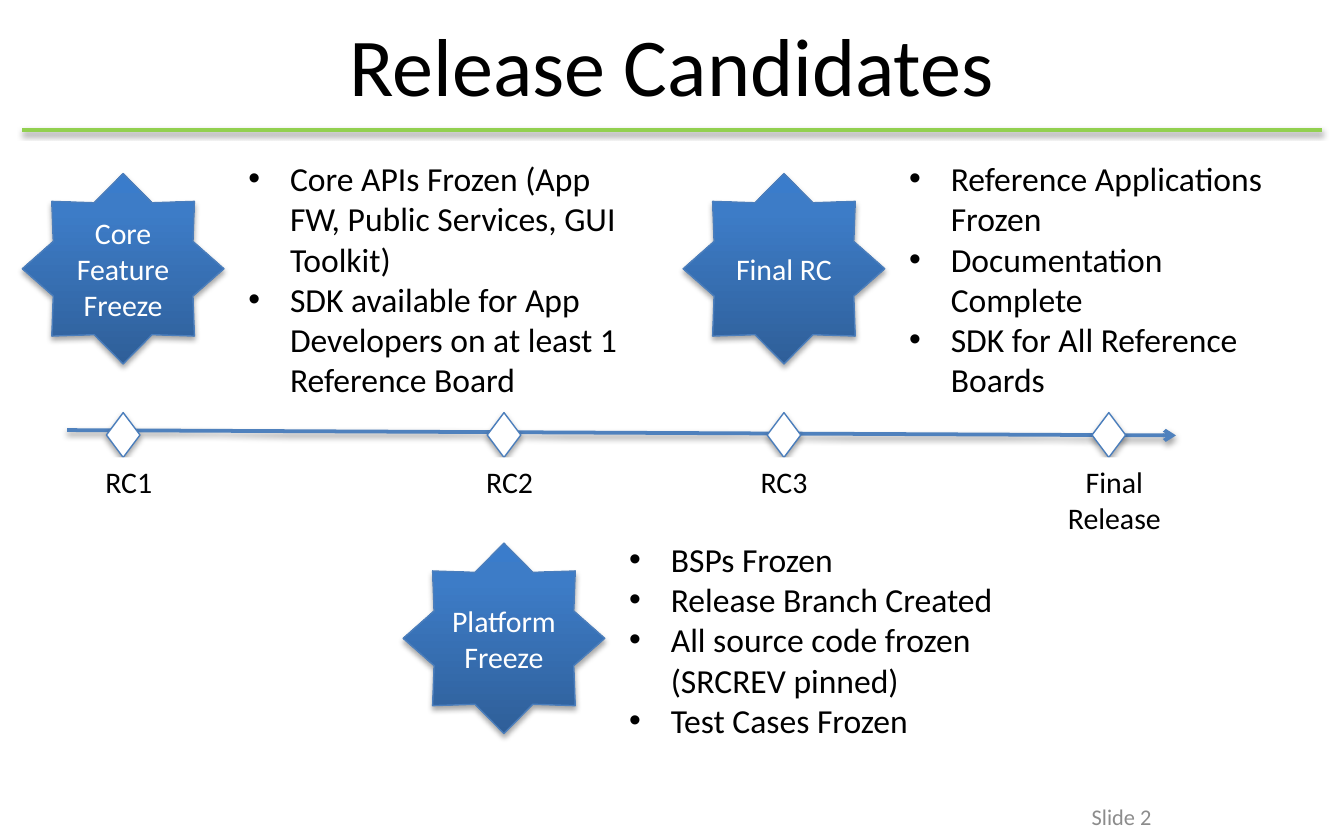
from lxml.etree import SubElement as Sub
from pptx import Presentation
from pptx.dml.color import RGBColor as Rgb
from pptx.enum.shapes import MSO_CONNECTOR as Conn, MSO_SHAPE as Kind
from pptx.enum.text import MSO_ANCHOR as Anchor, PP_ALIGN as Align
from pptx.oxml.ns import qn
from pptx.util import Inches, Pt


class Theme:
    font = "Calibri"
    black, white, gray = "000000", "FFFFFF", "8C8C8C"
    green, blue, edge = "92D050", "4F81BD", "4B7EBC"
    fade = [(0, "2F5F99"), (80, "3D7CC7"), (100, "3A7CCB")]
    head, body, label, foot = 44, 18, 16, 12


# The slide is a grid of 120 columns by 75 rows
COLS, ROWS, CELL = 120, 75, Inches(1 / 12)


def grid(*cells):
    return [round(c * CELL) for c in cells]


def node(parent, tag, **attrs):
    return Sub(parent, qn(tag), {k: str(v) for k, v in attrs.items()})


def shade(props, alpha, dist):
    """Give a shape or line a soft shadow below it."""
    old = props.find(qn("a:effectLst"))
    if old is not None:
        props.remove(old)
    cast = node(node(props, "a:effectLst"), "a:outerShdw", blurRad=Pt(3.1),
                dist=Pt(dist), dir=90 * 60000, rotWithShape=0)
    tint = node(cast, "a:srgbClr", val=Theme.black)
    node(tint, "a:alpha", val=alpha * 1000)


def blend(props):
    """Fill a shape from dark at its foot to light at its top."""
    fill = node(props, "a:gradFill", rotWithShape=1)
    stops = node(fill, "a:gsLst")
    for pos, tone in Theme.fade:
        node(node(stops, "a:gs", pos=pos * 1000), "a:srgbClr", val=tone)
    node(fill, "a:lin", ang=270 * 60000, scaled=0)
    props.find(qn("a:prstGeom")).addnext(fill)


def write(shape, lines, size=Theme.label, color=Theme.black,
          align=Align.CENTER, anchor=Anchor.TOP, bullet=False):
    """Put one paragraph for each line into a shape."""
    frame = shape.text_frame
    frame.word_wrap = True
    frame.vertical_anchor = anchor
    for i, line in enumerate(lines):
        para = frame.add_paragraph() if i else frame.paragraphs[0]
        para.text = line
        para.alignment = align
        if bullet:
            props = para._p.get_or_add_pPr()
            props.set("marL", str(Inches(0.31)))
            props.set("indent", str(Inches(-0.31)))
            node(props, "a:buFont", typeface="Arial")
            node(props, "a:buChar", char="•")
        font = para.font
        font.name, font.size = Theme.font, Pt(size)
        font.color.rgb = Rgb.from_string(color)


def text(slide, box, lines, **form):
    write(slide.shapes.add_textbox(*grid(*box)), lines, **form)


def rule(slide, ends, color):
    line = slide.shapes.add_connector(Conn.STRAIGHT, *grid(*ends))
    line.line.color.rgb = Rgb.from_string(color)
    line.line.width = Pt(2)
    shade(line._element.spPr, 38, 1.6)
    return line


def solid(slide, kind, box):
    shape = slide.shapes.add_shape(kind, *grid(*box))
    shape.fill.solid()
    shape.fill.fore_color.rgb = Rgb.from_string(Theme.white)
    shape.line.fill.background()
    shape.shadow.inherit = False
    return shape


def edge(shape):
    shape.line.color.rgb = Rgb.from_string(Theme.edge)
    shape.line.width = Pt(0.75)
    shade(shape._element.spPr, 35, 1.8)


def header(slide, box, title):
    x, y, w, h = box
    rule(slide, (x, y + h, x + w, y + h), Theme.green)
    text(slide, (x + 4, y, w - 8, 8.5), [title], size=Theme.head,
         anchor=Anchor.MIDDLE)


def track(slide, box, marks):
    """Draw the time line with a diamond and a label at each mark."""
    x, y, w, h = box
    arrow = rule(slide, (x, y, x + w, y + 0.48), Theme.blue)
    node(arrow.line._get_or_add_ln(), "a:tailEnd", type="arrow")
    top = y - 1.56
    for mid, left, wide, lines in marks:
        edge(solid(slide, Kind.DIAMOND, (mid - 1.5, top, 3, 4)))
        tag = solid(slide, Kind.RECTANGLE,
                    (left, top + 4, wide, h * len(lines)))
        write(tag, lines)


def stage(slide, box, drop, name, points):
    """Place a star, some rows down, with its points at the right."""
    x, y, w, h = box
    star = slide.shapes.add_shape(Kind.STAR_8_POINT,
                                  *grid(x, y + drop, 18, 17))
    blend(star._element.spPr)
    edge(star)
    write(star, [name], color=Theme.white, anchor=Anchor.MIDDLE)
    text(slide, (x + 19, y, w - 19, h), points, size=Theme.body,
         align=Align.LEFT, bullet=True)


def footer(slide, box, note):
    text(slide, box, [note], size=Theme.foot, color=Theme.gray,
         align=Align.RIGHT, anchor=Anchor.MIDDLE)


MARKS = [  # centre, label left, label width, label
    (11, 4, 15, ["RC1"]),
    (45, 38, 15, ["RC2"]),
    (70, 65, 10, ["RC3"]),
    (99, 94, 11, ["Final", "Release"]),
]
STAGES = [  # left, top, star drop, name, points
    (2, 13.5, 2, "Core Feature Freeze", [
        "Core APIs Frozen (App FW, Public Services, GUI Toolkit)",
        "SDK available for App Developers on at least 1 Reference Board"]),
    (36, 47.5, 1, "Platform Freeze", [
        "BSPs Frozen", "Release Branch Created",
        "All source code frozen (SRCREV pinned)", "Test Cases Frozen"]),
    (61, 13.5, 2, "Final RC", [
        "Reference Applications Frozen", "Documentation Complete",
        "SDK for All Reference Boards"]),
]


def main():
    deck = Presentation()
    deck.slide_width, deck.slide_height = grid(COLS, ROWS)
    slide = deck.slides.add_slide(deck.slide_layouts[6])
    header(slide, (2, 1.44, COLS - 4, 10.2), "Release Candidates")
    track(slide, (6, 38.4, 99, 4), MARKS)
    for x, y, drop, name, points in STAGES:
        stage(slide, (x, y, 56, 23), drop, name, points)
    footer(slide, (86, 71.25, 18, 3.25), "Slide 2")
    deck.save("out.pptx")


if __name__ == "__main__":
    main()
